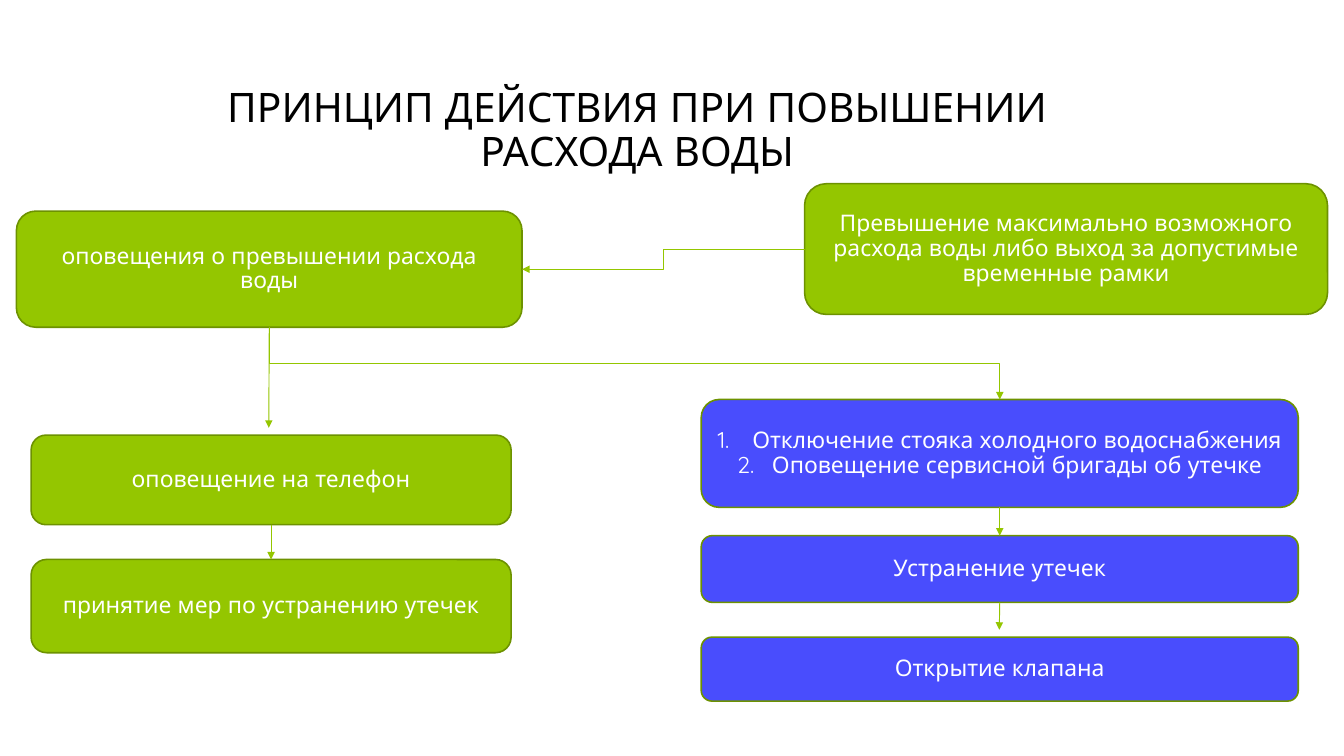
from dataclasses import dataclass
from typing import Optional

from lxml import etree
from pptx import Presentation
from pptx.dml.color import RGBColor
from pptx.enum.shapes import MSO_CONNECTOR as Connector, MSO_SHAPE as Shape
from pptx.enum.text import MSO_ANCHOR as Anchor, PP_ALIGN as Align
from pptx.oxml.ns import qn
from pptx.util import Emu, Pt

EMU_PER_PX = 9144  # 100 px to the inch
FONT = "Quicksand"
GREEN, DARK_GREEN, BLUE = "94C600", "6D9200", "494DFD"
WHITE, BLACK = "FFFFFF", "000000"
TOP, LEFT, BOTTOM, RIGHT = range(4)


@dataclass
class Step:
    name: str
    left: int
    top: int
    width: int
    height: int
    fill: str
    lines: list[str]
    numbered: bool = False

    def site(self, side: int) -> tuple[int, int]:
        middle_x = self.left + self.width // 2
        middle_y = self.top + self.height // 2
        return [(middle_x, self.top), (self.left, middle_y),
                (middle_x, self.top + self.height),
                (self.left + self.width, middle_y)][side]


@dataclass
class Arrow:
    start: str
    start_side: int = BOTTOM
    end: Optional[str] = None  # a free end hangs below the start
    end_side: int = TOP
    elbow: bool = False
    length: int = 0


STEPS = [
    Step("excess", 880, 201, 572, 143, GREEN,
         ["Превышение максимально возможного расхода воды либо выход за "
          "допустимые временные рамки"]),
    Step("alert", 18, 231, 553, 127, GREEN, ["оповещения о превышении расхода воды"]),
    Step("phone", 34, 476, 525, 98, GREEN, ["оповещение на телефон"]),
    Step("measures", 34, 612, 525, 102, GREEN, ["принятие мер по устранению утечек"]),
    Step("shutoff", 767, 437, 653, 118, BLUE,
         ["Отключение стояка холодного водоснабжения",
          "Оповещение сервисной бригады об утечке"], numbered=True),
    Step("repair", 767, 586, 653, 73, BLUE, ["Устранение утечек"]),
    Step("valve", 767, 697, 653, 70, BLUE, ["Открытие клапана"]),
]

ARROWS = [
    Arrow("excess", LEFT, "alert", RIGHT, elbow=True),
    Arrow("alert", length=110),
    Arrow("alert", end="shutoff", elbow=True),
    Arrow("phone", end="measures"),
    Arrow("shutoff", end="repair"),
    Arrow("repair", length=30),
]


def px(value: float) -> Emu:
    return Emu(round(value * EMU_PER_PX))


def color(value: str) -> RGBColor:
    return RGBColor.from_string(value)


def write_text(frame, lines: list[str], *, size: int, text_color: str,
               numbered: bool = False) -> None:
    frame.word_wrap = True
    frame.vertical_anchor = Anchor.MIDDLE
    for index, line in enumerate(lines):
        paragraph = frame.add_paragraph() if index else frame.paragraphs[0]
        if numbered:
            properties = paragraph._p.get_or_add_pPr()
            properties.set("marL", str(px(38)))
            properties.set("indent", str(px(-38)))
            etree.SubElement(properties, qn("a:buAutoNum"), type="arabicPeriod")
        paragraph.alignment = Align.CENTER
        paragraph.line_spacing = 0.9
        run = paragraph.add_run()
        run.text = line
        run.font.name = FONT
        run.font.size = Pt(size)
        run.font.color.rgb = color(text_color)


def draw_step(slide, step: Step):
    shape = slide.shapes.add_shape(Shape.ROUNDED_RECTANGLE, px(step.left), px(step.top),
                                   px(step.width), px(step.height))
    shape.shadow.inherit = False
    shape.fill.solid()
    shape.fill.fore_color.rgb = color(step.fill)
    shape.line.color.rgb = color(DARK_GREEN)
    shape.line.width = Pt(1.25)
    write_text(shape.text_frame, step.lines, size=18, text_color=WHITE,
               numbered=step.numbered)
    return shape


def turn_elbow(connector) -> None:
    """Make an elbow that runs down and to the right leave vertically."""
    across, down = connector.width, connector.height
    shift = (across - down) // 2
    connector.left, connector.top = connector.left + shift, connector.top - shift
    connector.width, connector.height = down, across
    transform = connector._element.spPr.find(qn("a:xfrm"))
    transform.set("rot", str(270 * 60000))
    transform.set("flipH", "1")


def draw_arrow(slide, arrow: Arrow, steps: dict[str, Step], shapes: dict) -> None:
    start = steps[arrow.start].site(arrow.start_side)
    end = (steps[arrow.end].site(arrow.end_side) if arrow.end
           else (start[0], start[1] + arrow.length))
    kind = Connector.ELBOW if arrow.elbow else Connector.STRAIGHT
    connector = slide.shapes.add_connector(kind, *map(px, start + end))
    connector.begin_connect(shapes[arrow.start], arrow.start_side)
    if arrow.end:
        connector.end_connect(shapes[arrow.end], arrow.end_side)
    if arrow.elbow and arrow.start_side == BOTTOM:
        turn_elbow(connector)
    connector.line.color.rgb = color(GREEN)
    connector.line.width = Pt(0.75)
    etree.SubElement(connector.line._get_or_add_ln(), qn("a:tailEnd"), type="triangle")
    etree.SubElement(connector._element.spPr, qn("a:effectLst"))


def main() -> None:
    presentation = Presentation()
    presentation.slide_width, presentation.slide_height = px(1470), px(827)
    slide = presentation.slides.add_slide(presentation.slide_layouts[6])

    # Title
    title = slide.shapes.add_textbox(px(198), px(85), px(998), px(118))
    write_text(title.text_frame, ["ПРИНЦИП ДЕЙСТВИЯ ПРИ ПОВЫШЕНИИ РАСХОДА ВОДЫ"],
               size=32, text_color=BLACK)

    # Flowchart steps and the arrows between them
    steps = {step.name: step for step in STEPS}
    shapes = {step.name: draw_step(slide, step) for step in STEPS}
    for arrow in ARROWS:
        draw_arrow(slide, arrow, steps, shapes)

    presentation.save("out.pptx")


if __name__ == "__main__":
    main()
